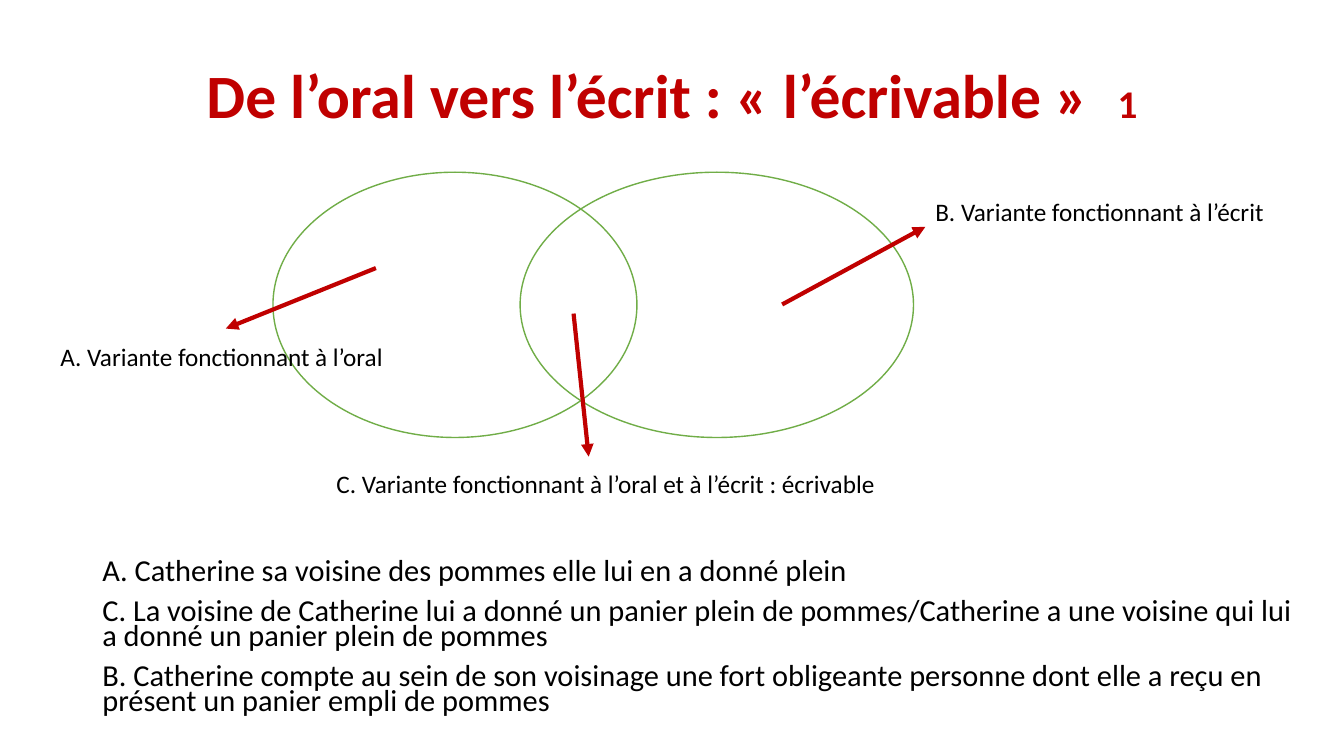
from lxml.etree import SubElement
from pptx import Presentation
from pptx.dml.color import RGBColor
from pptx.enum.shapes import MSO_CONNECTOR, MSO_SHAPE
from pptx.enum.text import MSO_ANCHOR, MSO_AUTO_SIZE
from pptx.oxml.ns import qn
from pptx.util import Pt

RED, GREEN, BLACK = "C00000", "70AD47", "000000"


def colour(value):
    return RGBColor.from_string(value)


def write(para, text, size=18, fill=BLACK, bold=False, spacing=None, before=0, font="Calibri"):
    span = para.add_run()
    span.text = text
    span.font.name = font
    span.font.size = Pt(size)
    span.font.bold = bold
    span.font.color.rgb = colour(fill)
    para.space_before = Pt(before)
    if spacing:
        para.line_spacing = spacing


class SlideBuilder:
    def __init__(self, page, outline=GREEN, accent=RED):
        self.page = page
        self.outline = outline
        self.accent = accent

    def title(self, spans, left, top, width, height):
        box = self.page.shapes.title
        box.left, box.top, box.width, box.height = Pt(left), Pt(top), Pt(width), Pt(height)
        box.text_frame.vertical_anchor = MSO_ANCHOR.MIDDLE
        for text, size in spans:
            write(box.text_frame.paragraphs[0], text, size=size,
                  fill=self.accent, bold=True, spacing=0.9)

    def text(self, lines, left, top, width, height, grow=False, **style):
        box = self.page.shapes.add_textbox(Pt(left), Pt(top), Pt(width), Pt(height))
        frame = box.text_frame
        frame.word_wrap = True
        frame.auto_size = MSO_AUTO_SIZE.SHAPE_TO_FIT_TEXT if grow else MSO_AUTO_SIZE.NONE
        for index, line in enumerate(lines):
            para = frame.add_paragraph() if index else frame.paragraphs[0]
            write(para, line, **style)

    def ellipse(self, left, top, width, height):
        shape = self.page.shapes.add_shape(
            MSO_SHAPE.OVAL, Pt(left), Pt(top), Pt(width), Pt(height))
        shape.shadow.inherit = False
        shape.fill.background()
        shape.line.color.rgb = colour(self.outline)
        shape.line.width = Pt(1)

    def arrow(self, start, end):
        line = self.page.shapes.add_connector(
            MSO_CONNECTOR.STRAIGHT, *(Pt(value) for value in start + end))
        line.line.color.rgb = colour(self.accent)
        line.line.width = Pt(3)
        SubElement(line.line._get_or_add_ln(), qn("a:tailEnd"), type="triangle")
        SubElement(line._element.spPr, qn("a:effectLst"))


def main():
    deck = Presentation()
    deck.slide_width, deck.slide_height = Pt(960), Pt(540)
    builder = SlideBuilder(deck.slides.add_slide(deck.slide_layouts[5]))

    builder.title([("De l’oral vers l’écrit : « l’écrivable »  ", 44), ("1", 28)],
                  66, 28.8, 828, 82.8)
    builder.text([
        "A. Catherine sa voisine des pommes elle lui en a donné plein",
        "C. La voisine de Catherine lui a donné un panier plein de pommes/"
        "Catherine a une voisine qui lui a donné un panier plein de pommes",
        "B. Catherine compte au sein de son voisinage une fort obligeante personne "
        "dont elle a reçu en présent un panier empli de pommes",
    ], 66, 397.4, 874, 127.4, size=21.7, spacing=0.7, before=10)

    for left, width in ((371.5, 281), (195, 260)):
        builder.ellipse(left, 123, width, 189.5)

    for start, end in (
        ((268.5, 191.5), (161.3, 234.7)),
        ((558.7, 217.5), (661, 162)),
        ((409.7, 224), (420.5, 326.2)),
    ):
        builder.arrow(start, end)

    for label, left, top, width in (
        ("B. Variante fonctionnant à l’écrit", 661, 136.8, 273.6),
        ("A. Variante fonctionnant à l’oral", 36, 240, 248),
        ("C. Variante fonctionnant à l’oral et à l’écrit : écrivable", 233.3, 331.2, 427),
    ):
        builder.text([label], left, top, width, 29, grow=True)

    deck.save("out.pptx")


if __name__ == "__main__":
    main()
